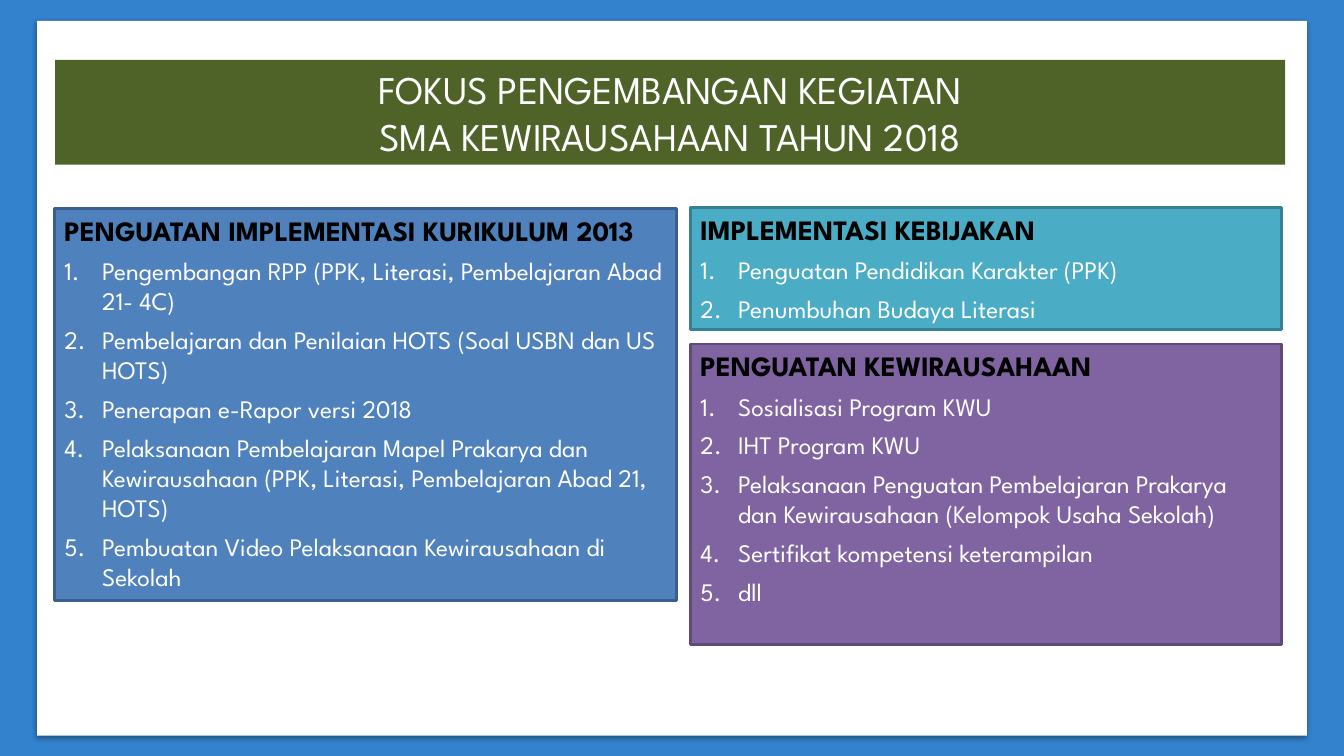
from lxml import etree
from pptx import Presentation
from pptx.dml.color import RGBColor
from pptx.enum.shapes import MSO_SHAPE
from pptx.enum.text import MSO_ANCHOR, MSO_AUTO_SIZE, PP_ALIGN
from pptx.oxml.ns import qn
from pptx.util import Pt

RECTANGLE = MSO_SHAPE.RECTANGLE
TOP, MIDDLE = MSO_ANCHOR.TOP, MSO_ANCHOR.MIDDLE
NO_AUTOFIT = MSO_AUTO_SIZE.NONE
LEFT, CENTER = PP_ALIGN.LEFT, PP_ALIGN.CENTER

TITLE_ONLY = 5
FONT = "League Spartan"
WHITE, BLACK = "FFFFFF", "000000"
FRAME_BLUE, TITLE_GREEN = "3382CE", "4F6228"
LIST_INDENT = 27

TITLE_LINES = ["FOKUS PENGEMBANGAN KEGIATAN", "SMA KEWIRAUSAHAAN TAHUN 2018"]

# Box (left, top, width, height in points), fill, border, heading, items
PANELS = [
    ((38.9, 149, 444.2, 280), "4F81BD", "3A5F8C",
     "PENGUATAN IMPLEMENTASI KURIKULUM 2013",
     ["Pengembangan RPP (PPK, Literasi, Pembelajaran Abad 21- 4C)",
      "Pembelajaran dan Penilaian HOTS (Soal USBN dan US HOTS)",
      "Penerapan e-Rapor versi 2018",
      "Pelaksanaan Pembelajaran Mapel Prakarya dan Kewirausahaan "
      "(PPK, Literasi, Pembelajaran Abad 21, HOTS)",
      "Pembuatan Video Pelaksanaan Kewirausahaan di Sekolah"]),
    ((493.2, 148.2, 422, 87), "4BACC6", "377F92",
     "IMPLEMENTASI KEBIJAKAN",
     ["Penguatan Pendidikan Karakter (PPK)",
      "Penumbuhan Budaya Literasi"]),
    ((493.2, 245.7, 422, 214.6), "8064A2", "5F4A78",
     "PENGUATAN KEWIRAUSAHAAN",
     ["Sosialisasi Program KWU",
      "IHT Program KWU",
      "Pelaksanaan Penguatan Pembelajaran Prakarya dan Kewirausahaan "
      "(Kelompok Usaha Sekolah)",
      "Sertifikat kompetensi keterampilan",
      "dll"]),
]


def color(hex_code):
    return RGBColor.from_string(hex_code)


def paint(target, hex_code):
    target.fill.solid()
    target.fill.fore_color.rgb = color(hex_code)


def add_rectangle(slide, box, fill, border=None):
    rectangle = slide.shapes.add_shape(RECTANGLE, *map(Pt, box))
    rectangle.shadow.inherit = False
    paint(rectangle, fill)
    if border:
        rectangle.line.color.rgb = color(border)
        rectangle.line.width = Pt(2)
    else:
        rectangle.line.fill.background()
    return rectangle


def prepare_frame(shape, anchor):
    frame = shape.text_frame
    frame.word_wrap = True
    frame.auto_size = NO_AUTOFIT
    frame.vertical_anchor = anchor
    frame.margin_left = frame.margin_right = Pt(7.2)
    frame.margin_top = frame.margin_bottom = Pt(3.6)
    return frame


def write(frame, text, *, size, ink=WHITE, bold=False, align=LEFT,
          after=0, numbered=False):
    """Fill the frame's empty first paragraph, or add a new one."""
    paragraph = frame.paragraphs[0]
    if paragraph.runs:
        paragraph = frame.add_paragraph()
    paragraph.alignment = align
    paragraph.space_before, paragraph.space_after = Pt(0), Pt(after)
    if numbered:
        properties = paragraph._p.get_or_add_pPr()
        properties.set("marL", str(Pt(LIST_INDENT)))
        properties.set("indent", str(-Pt(LIST_INDENT)))
        etree.SubElement(properties, qn("a:buFont"), typeface="+mj-lt")
        etree.SubElement(properties, qn("a:buAutoNum"), type="arabicPeriod")
    run = paragraph.add_run()
    run.text = text
    run.font.name = FONT
    run.font.size = Pt(size)
    run.font.bold = bold
    run.font.color.rgb = color(ink)


def add_page(slide, box):
    """White page on a blue frame, with a soft shadow below."""
    paint(slide.background, FRAME_BLUE)
    page = add_rectangle(slide, box, WHITE)
    effects = page.element.spPr.find(qn("a:effectLst"))
    shadow = etree.SubElement(effects, qn("a:outerShdw"), blurRad=str(Pt(3.1)),
                              dist=str(Pt(1.6)), dir="5400000", rotWithShape="0")
    shade = etree.SubElement(shadow, qn("a:srgbClr"), val=BLACK)
    etree.SubElement(shade, qn("a:alpha"), val="38000")


def place_title(slide, box, lines):
    title = slide.shapes.title
    title.left, title.top, title.width, title.height = map(Pt, box)
    paint(title, TITLE_GREEN)
    frame = prepare_frame(title, MIDDLE)
    for line in lines:
        write(frame, line, size=28, align=CENTER)
    # Bring the title in front of the page
    slide.shapes.element.append(title.element)


def add_panel(slide, box, fill, border, heading, items):
    frame = prepare_frame(add_rectangle(slide, box, fill, border), TOP)
    write(frame, heading, size=20, ink=BLACK, bold=True, after=6)
    for item in items:
        write(frame, item, size=18, after=6, numbered=True)


def main():
    presentation = Presentation()
    presentation.slide_width, presentation.slide_height = Pt(960), Pt(540)
    slide = presentation.slides.add_slide(presentation.slide_layouts[TITLE_ONLY])
    add_page(slide, (26.5, 15, 907, 510.5))
    place_title(slide, (39.4, 42.7, 878.5, 75), TITLE_LINES)
    for panel in PANELS:
        add_panel(slide, *panel)
    presentation.save("out.pptx")


if __name__ == "__main__":
    main()
